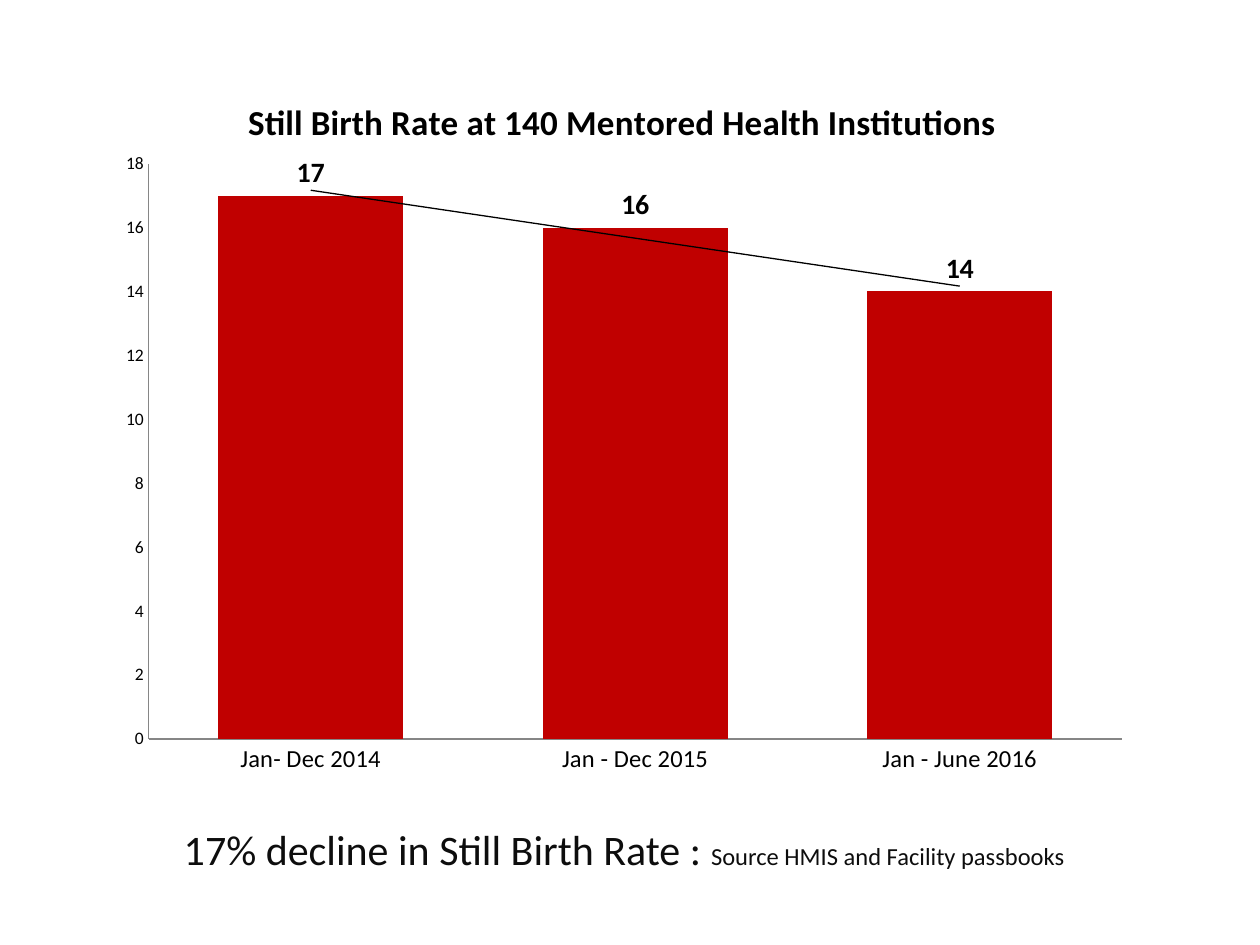
from lxml.etree import SubElement
from pptx import Presentation
from pptx.chart.data import CategoryChartData
from pptx.dml.color import RGBColor
from pptx.enum.chart import XL_CHART_TYPE, XL_LABEL_POSITION, XL_TICK_MARK
from pptx.enum.text import MSO_ANCHOR, MSO_AUTO_SIZE, PP_ALIGN
from pptx.oxml import parse_xml
from pptx.oxml.ns import nsdecls, qn
from pptx.util import Inches, Pt

BLACK = RGBColor(0x00, 0x00, 0x00)
INK = RGBColor(0x0D, 0x0D, 0x0D)
RED = RGBColor(0xC0, 0x00, 0x00)
GREY = RGBColor(0x86, 0x86, 0x86)
FONT = "Calibri"

RATES = {"Jan- Dec 2014": 17, "Jan - Dec 2015": 16, "Jan - June 2016": 14}
CHART_TITLE = "Still Birth Rate at 140 Mentored Health Institutions "
FINDING = [("17% decline in Still Birth Rate : ", 24),
           ("Source HMIS and Facility passbooks", 14)]


def format_font(font, size, color=BLACK, bold=False):
    for name, value in {"name": FONT, "size": Pt(size), "bold": bold}.items():
        setattr(font, name, value)
    font.color.rgb = color


def chart_layout(**fractions):
    """Manual layout, in fractions of the chart's box."""
    layout = parse_xml(f"<c:layout {nsdecls('c')}><c:manualLayout/></c:layout>")
    settings = {"xMode": "edge", "yMode": "edge", **fractions}
    if "w" in fractions:
        settings = {"layoutTarget": "inner", **settings}
    for tag, value in settings.items():
        SubElement(layout[0], qn(f"c:{tag}")).set("val", str(value))
    return layout


def replace_layout(parent, layout, position):
    for old in parent.findall(qn("c:layout")):
        parent.remove(old)
    parent.insert(position, layout)


def add_trend_line(series):
    trend = parse_xml(
        f'<c:trendline {nsdecls("c", "a")}>'
        f'<c:spPr><a:ln w="{Pt(0.75)}"><a:solidFill><a:srgbClr val="{BLACK}"/>'
        "</a:solidFill></a:ln></c:spPr>"
        '<c:trendlineType val="linear"/>'
        '<c:dispRSqr val="0"/><c:dispEq val="0"/></c:trendline>')
    series._element.find(qn("c:cat")).addprevious(trend)


def add_rate_chart(slide, left, top, width, height):
    rates = CategoryChartData()
    rates.categories = list(RATES)
    rates.add_series("Series 1", list(RATES.values()))
    chart = slide.shapes.add_chart(XL_CHART_TYPE.COLUMN_CLUSTERED,
                                   left, top, width, height, rates).chart
    format_font(chart.font, 10)
    chart.has_legend = False

    # Title
    chart.has_title = True
    title = chart.chart_title
    title.text_frame.text = CHART_TITLE
    format_font(title.text_frame.paragraphs[0].runs[0].font, 20, bold=True)
    title.include_in_layout = False
    replace_layout(title._element, chart_layout(x=0.13, y=0.04), 1)

    # Axes
    for axis, size in ((chart.category_axis, 14), (chart.value_axis, 10)):
        axis.has_major_gridlines = False
        axis.major_tick_mark = axis.minor_tick_mark = XL_TICK_MARK.NONE
        axis.format.line.color.rgb = GREY
        axis.format.line.width = Pt(0.75)
        format_font(axis.tick_labels.font, size)
    for name, value in {"minimum_scale": 0, "maximum_scale": 18, "major_unit": 2}.items():
        setattr(chart.value_axis, name, value)

    # Columns, their values and the trend
    plot = chart.plots[0]
    plot.gap_width = 75
    plot.vary_by_categories = False
    columns = plot.series[0]
    columns.format.fill.solid()
    columns.format.fill.fore_color.rgb = RED
    labels = columns.data_labels
    labels.show_value = True
    labels.position = XL_LABEL_POSITION.OUTSIDE_END
    format_font(labels.font, 16, bold=True)
    add_trend_line(columns)
    replace_layout(chart._chartSpace.chart.plotArea,
                   chart_layout(x=0.04, y=0.14, w=0.94, h=0.79), 0)


def add_finding(slide, left, top, width, height):
    frame = slide.shapes.add_textbox(left, top, width, height).text_frame
    for name, value in {"word_wrap": False, "auto_size": MSO_AUTO_SIZE.SHAPE_TO_FIT_TEXT,
                        "vertical_anchor": MSO_ANCHOR.TOP}.items():
        setattr(frame, name, value)
    sentence = frame.paragraphs[0]
    sentence.alignment = PP_ALIGN.CENTER
    for words, size in FINDING:
        run = sentence.add_run()
        run.text = words
        format_font(run.font, size, INK)


def main():
    deck = Presentation()
    deck.slide_width, deck.slide_height = Inches(10), Inches(7.5)
    slide = deck.slides.add_slide(deck.slide_layouts[6])
    add_rate_chart(slide, Inches(0.85), Inches(0.49), Inches(8.22), Inches(5.78))
    add_finding(slide, Inches(1.33), Inches(6.49), Inches(7.25), Inches(0.5))
    deck.save("out.pptx")


if __name__ == "__main__":
    main()
